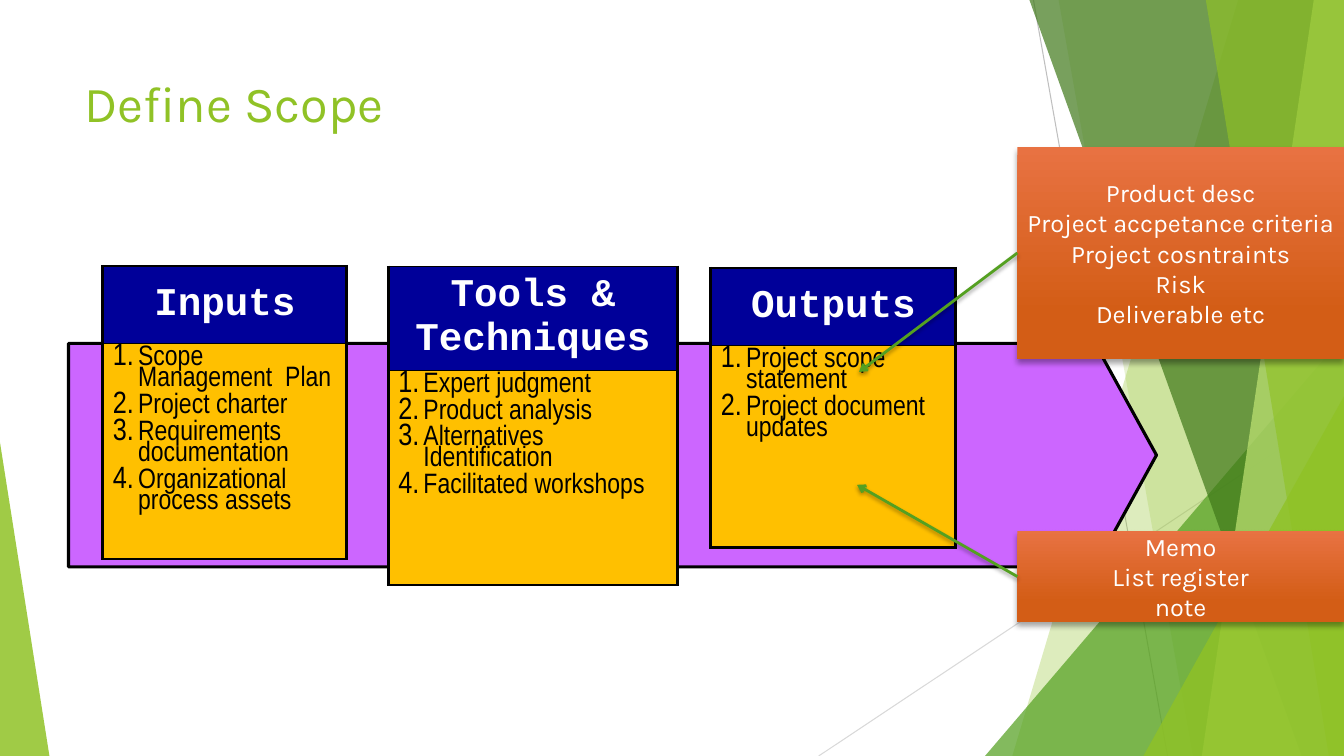
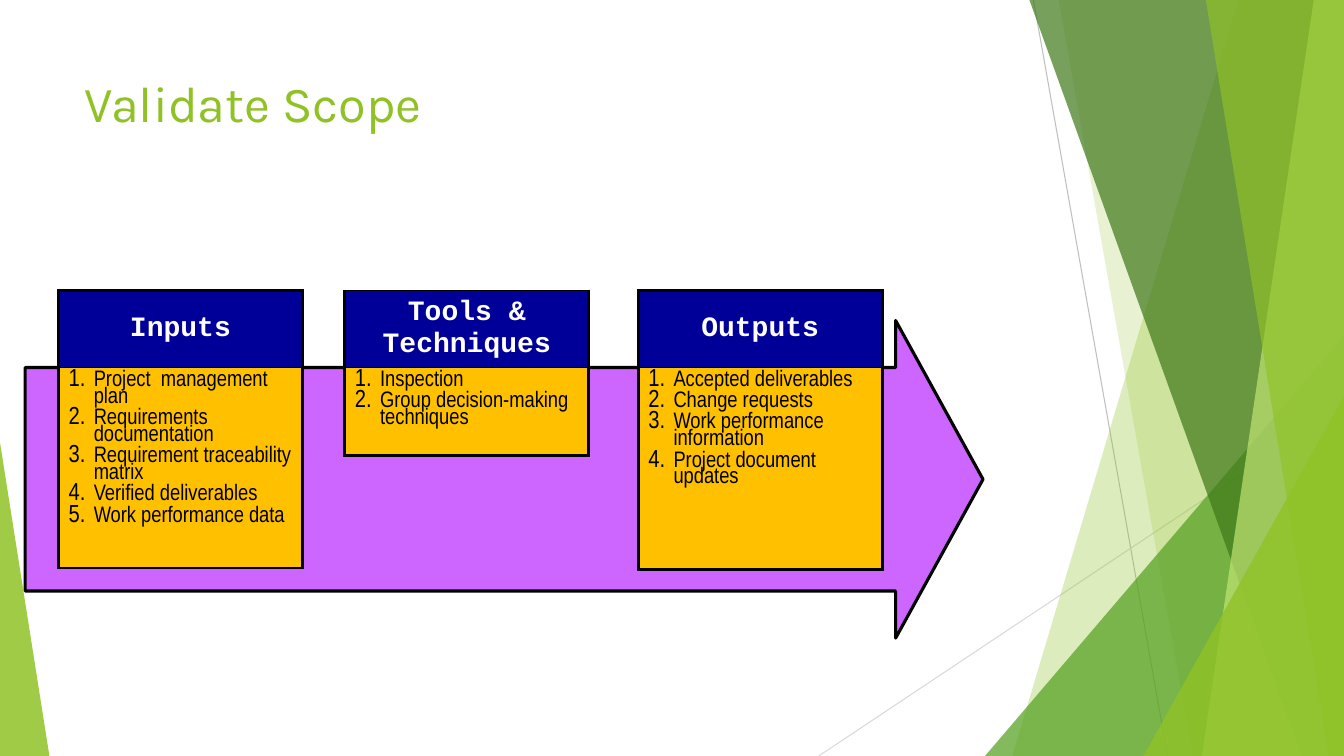
from dataclasses import dataclass

from lxml import etree
from pptx import Presentation
from pptx.dml.color import RGBColor
from pptx.enum.shapes import MSO_CONNECTOR, MSO_SHAPE
from pptx.enum.text import MSO_ANCHOR, PP_ALIGN
from pptx.oxml.ns import qn
from pptx.util import Inches, Pt

STRAIGHT = MSO_CONNECTOR.STRAIGHT
TRIANGLE = MSO_SHAPE.ISOSCELES_TRIANGLE
RIGHT_ARROW = MSO_SHAPE.RIGHT_ARROW
PROCESS = MSO_SHAPE.FLOWCHART_PROCESS
TOP, MIDDLE = MSO_ANCHOR.TOP, MSO_ANCHOR.MIDDLE
LEFT, CENTER = PP_ALIGN.LEFT, PP_ALIGN.CENTER
LEFT_SIDE = 1


@dataclass(frozen=True)
class Theme:
    lime: str = "90C226"
    green: str = "54A021"
    forest: str = "3F7819"
    pale_lime: str = "C0E474"
    gray: str = "BFBFBF"
    light_gray: str = "D9D9D9"
    black: str = "000000"
    white: str = "FFFFFF"
    purple: str = "CC66FF"
    navy: str = "000099"
    amber: str = "FFC000"
    orange: str = "E87242"
    dark_orange: str = "D35D16"
    sans: str = "Karla"
    mono: str = "Courier New"
    narrow: str = "Arial Narrow"
    title_size: int = 36
    callout_size: int = 18
    thick: float = 2.25
    thin: float = 1


@dataclass(frozen=True)
class Box:
    left: float
    top: float
    width: float
    height: float

    @property
    def right(self):
        return self.left + self.width

    @property
    def bottom(self):
        return self.top + self.height

    def lengths(self):
        return [Inches(v) for v in (self.left, self.top, self.width, self.height)]


@dataclass(frozen=True)
class Panel:
    heading: str
    items: tuple
    offset: tuple
    width: float
    rows: tuple
    top_line: float


THEME = Theme()
PAGE = Box(0, 0, 13.33, 7.5)
TITLE = Box(0.74, 0.67, 9.4, 1.44)


def color(code):
    return RGBColor.from_string(code)


def child(parent, tag, **attributes):
    element = etree.SubElement(parent, qn(tag))
    for name, value in attributes.items():
        element.set(name, str(value))
    return element


def set_effects(shape, blur=0, distance=0):
    effects = child(shape._element.spPr, "a:effectLst")
    if blur:
        shadow = child(effects, "a:outerShdw", blurRad=Pt(blur), dist=Pt(distance),
                       dir=5400000, rotWithShape=0)
        child(child(shadow, "a:srgbClr", val=THEME.black), "a:alpha", val=35000)


def paint(shape, code, opacity=100):
    shape.shadow.inherit = False
    shape.line.fill.background()
    shape.fill.solid()
    shape.fill.fore_color.rgb = color(code)
    if opacity < 100:
        tint = shape._element.spPr.find(qn("a:solidFill"))[0]
        child(tint, "a:alpha", val=opacity * 1000)


def add_line(page, start, end, code, width):
    line = page.shapes.add_connector(STRAIGHT, *[Inches(v) for v in (*start, *end)])
    line.line.color.rgb = color(code)
    line.line.width = Pt(width)
    return line


def write(para, text, font, size, code, bold=False, align=LEFT):
    para.text = text
    para.alignment = align
    for span in para.runs:
        span.font.name = font
        span.font.size = Pt(size)
        span.font.bold = bold
        span.font.color.rgb = color(code)


def add_facet(page, box, top_x, bottom_x, code, opacity):
    builder = page.shapes.build_freeform(Inches(top_x), Inches(box.top))
    corners = [(box.right, box.top), (box.right, box.bottom), (bottom_x, box.bottom)]
    builder.add_line_segments([(Inches(x), Inches(y)) for x, y in corners])
    paint(builder.convert_to_shape(), code, opacity)


def add_wedge(page, box, peak, code, opacity):
    wedge = page.shapes.add_shape(TRIANGLE, *box.lengths())
    wedge.adjustments[0] = peak
    paint(wedge, code, opacity)


def corner_box(box, width, height):
    return Box(box.right - width, box.bottom - height, width, height)


def draw_backdrop(page, box):
    for start, end, code in (
        ((10.25, box.top), (11.58, box.bottom), THEME.gray),
        ((box.right, 4.03), (8.12, box.bottom), THEME.light_gray),
    ):
        set_effects(add_line(page, start, end, code, 0.75))
    add_facet(page, box, 12.28, 10.04, THEME.lime, 30)
    add_facet(page, box, 10.5, 11.83, THEME.lime, 20)
    add_wedge(page, corner_box(box, 3.56, 4.17), 1, THEME.green, 72)
    add_facet(page, box, 10.21, 12.91, THEME.forest, 70)
    add_facet(page, box, 13.03, 11.92, THEME.pale_lime, 70)
    add_facet(page, box, 11.96, 13.18, THEME.lime, 65)
    add_wedge(page, corner_box(box, 1.99, 3.57), 1, THEME.lime, 80)
    add_wedge(page, Box(box.left, box.bottom - 3.11, 0.49, 3.11), 0, THEME.lime, 85)


def draw_title(page, box, text):
    frame = page.shapes.add_textbox(*box.lengths()).text_frame
    frame.word_wrap = True
    frame.vertical_anchor = TOP
    write(frame.paragraphs[0], text, THEME.sans, THEME.title_size, THEME.lime)


def style_cell(cell, code, top, bottom):
    properties = cell._tc.get_or_add_tcPr()
    sides = (("L", THEME.thick), ("R", THEME.thick), ("T", top), ("B", bottom))
    for side, width in sides:
        border = child(properties, f"a:ln{side}", w=Pt(width))
        child(child(border, "a:solidFill"), "a:srgbClr", val=THEME.black)
    cell.fill.solid()
    cell.fill.fore_color.rgb = color(code)


def number_paragraph(para):
    properties = para._p.get_or_add_pPr()
    properties.set("marL", str(Inches(0.25)))
    properties.set("indent", str(-Inches(0.25)))
    child(properties, "a:buSzPct", val=110000)
    child(properties, "a:buAutoNum", type="arabicPeriod")


def draw_panel(page, box, panel, heading_size, item_size):
    table = page.shapes.add_table(2, 1, *box.lengths()).table
    table.first_row = table.horz_banding = False
    for row, height in zip(table.rows, panel.rows):
        row.height = Inches(height)
    heading, body = table.cell(0, 0), table.cell(1, 0)
    style_cell(heading, THEME.navy, panel.top_line, THEME.thin)
    style_cell(body, THEME.amber, THEME.thin, THEME.thick)
    heading.vertical_anchor = MIDDLE
    write(heading.text_frame.paragraphs[0], panel.heading, THEME.mono, heading_size,
          THEME.white, True, CENTER)
    body.text_frame.text = "\n".join(panel.items)
    for index, para in enumerate(body.text_frame.paragraphs):
        number_paragraph(para)
        para.line_spacing = 0.8
        para.space_before = Pt(0.2 * item_size if index else 0)
        write(para, panel.items[index], THEME.narrow, item_size, THEME.black)


def draw_process(page, box, panels, heading_size, item_size):
    arrow = page.shapes.add_shape(RIGHT_ARROW, *box.lengths())
    arrow.adjustments[0] = 0.704
    arrow.adjustments[1] = 0.275
    paint(arrow, THEME.purple)
    arrow.line.color.rgb = color(THEME.black)
    arrow.line.width = Pt(THEME.thick)
    for panel in panels:
        left, top = panel.offset
        panel_box = Box(box.left + left, box.top + top, panel.width, sum(panel.rows))
        draw_panel(page, panel_box, panel, heading_size, item_size)


def draw_callout(page, box, lines, target):
    callout = page.shapes.add_shape(PROCESS, *box.lengths())
    callout.line.fill.background()
    callout.fill.gradient()
    callout.fill.gradient_angle = 270
    stops = ((0, THEME.orange), (0.78, THEME.dark_orange))
    for stop, (position, code) in zip(callout.fill.gradient_stops, stops):
        stop.position = position
        stop.color.rgb = color(code)
    set_effects(callout, 4, 3)
    frame = callout.text_frame
    frame.word_wrap = True
    frame.vertical_anchor = MIDDLE
    frame.margin_left = frame.margin_right = Inches(0.05)
    frame.text = "\n".join(lines)
    for para, text in zip(frame.paragraphs, lines):
        write(para, text, THEME.sans, THEME.callout_size, THEME.white, align=CENTER)
    start = (box.left, box.top + box.height / 2)
    pointer = add_line(page, start, target, THEME.green, 2)
    pointer.begin_connect(callout, LEFT_SIDE)
    child(pointer.line._get_or_add_ln(), "a:tailEnd", type="arrow")
    set_effects(pointer, 3, 2)


def build_page(deck, title, box, panels, heading_size, item_size, callouts=()):
    page = deck.slides.add_slide(deck.slide_layouts[6])
    draw_backdrop(page, PAGE)
    draw_title(page, TITLE, title)
    draw_process(page, box, panels, heading_size, item_size)
    for callout in callouts:
        draw_callout(page, *callout)


DEFINE_PANELS = (
    Panel("Inputs", ("Scope Management  Plan", "Project charter",
                     "Requirements documentation", "Organizational process assets"),
          (0.34, -0.3), 2.42, (0.77, 2.1), THEME.thick),
    Panel("Tools & Techniques", ("Expert judgment", "Product analysis",
                                 "Alternatives Identification", "Facilitated workshops"),
          (3.17, -0.3), 2.87, (0.98, 2.13), THEME.thin),
    Panel("Outputs", ("Project scope statement", "Project document updates"),
          (6.37, -0.28), 2.43, (0.77, 2), THEME.thick),
)
VALIDATE_PANELS = (
    Panel("Inputs", ("Project  management plan", "Requirements documentation",
                     "Requirement traceability matrix", "Verified deliverables",
                     "Work performance data"),
          (0.33, -0.3), 2.42, (0.77, 1.95), THEME.thick),
    Panel("Tools & Techniques", ("Inspection", "Group decision-making techniques"),
          (3.17, -0.3), 2.42, (0.73, 0.87), THEME.thin),
    Panel("Outputs", ("Accepted deliverables", "Change requests",
                      "Work performance information", "Project document updates"),
          (6.08, -0.3), 2.42, (0.77, 2), THEME.thick),
)
CALLOUTS = (
    (Box(10.09, 1.46, 3.24, 2.1),
     ("Product desc", "Project accpetance criteria", "Project cosntraints", "Risk",
      "Deliverable etc"), (8.52, 3.69)),
    (Box(10.09, 5.27, 3.24, 0.9), ("Memo", "List register", "note"), (8.5, 4.81)),
)


def main():
    deck = Presentation()
    deck.slide_width, deck.slide_height = Inches(PAGE.width), Inches(PAGE.height)
    build_page(deck, "Define Scope", Box(0.68, 2.94, 10.79, 3.15), DEFINE_PANELS,
               28, 20, CALLOUTS)
    build_page(deck, "Validate Scope", Box(0.25, 3.18, 9.5, 3.15), VALIDATE_PANELS,
               20, 16)
    deck.save("out.pptx")


if __name__ == "__main__":
    main()
